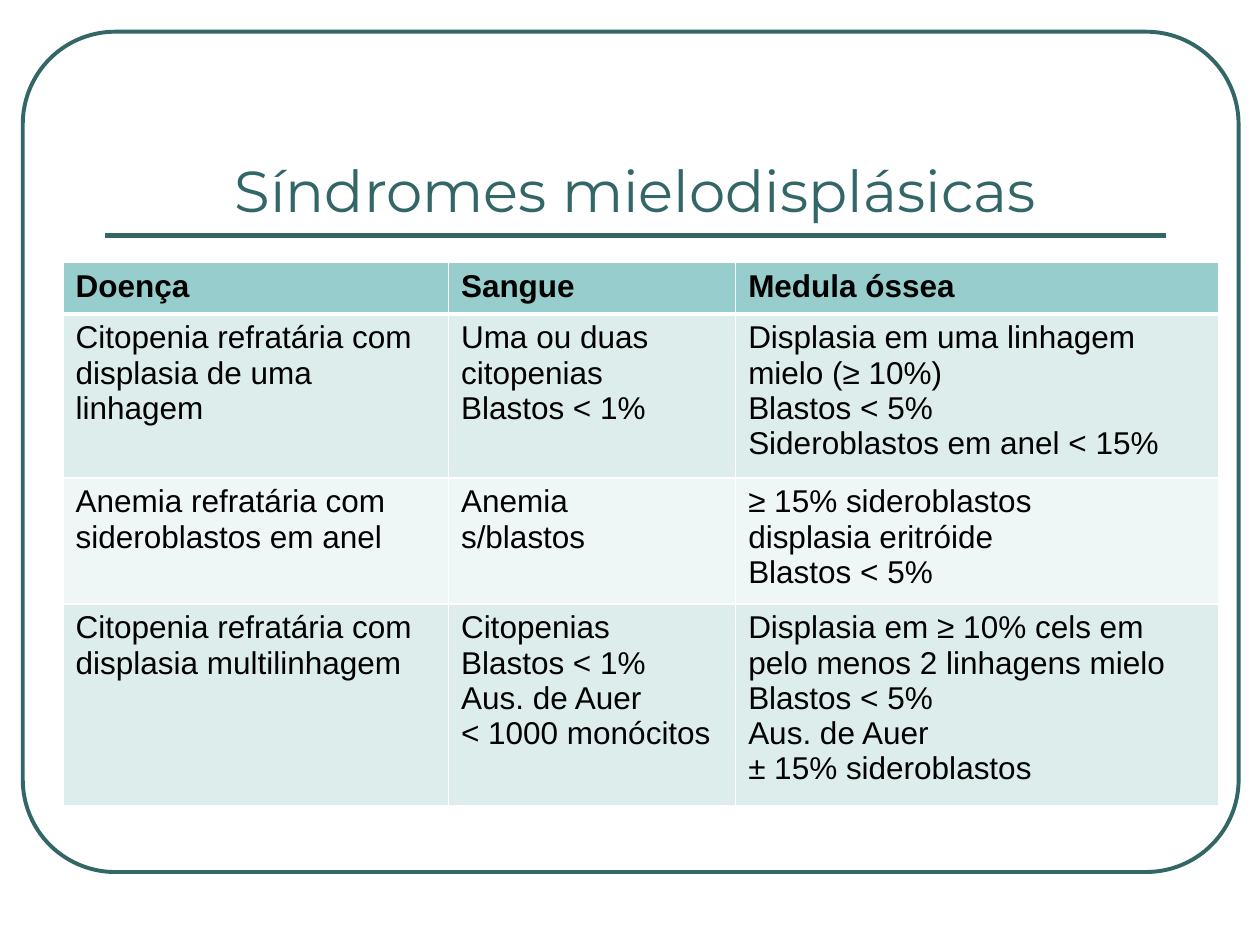
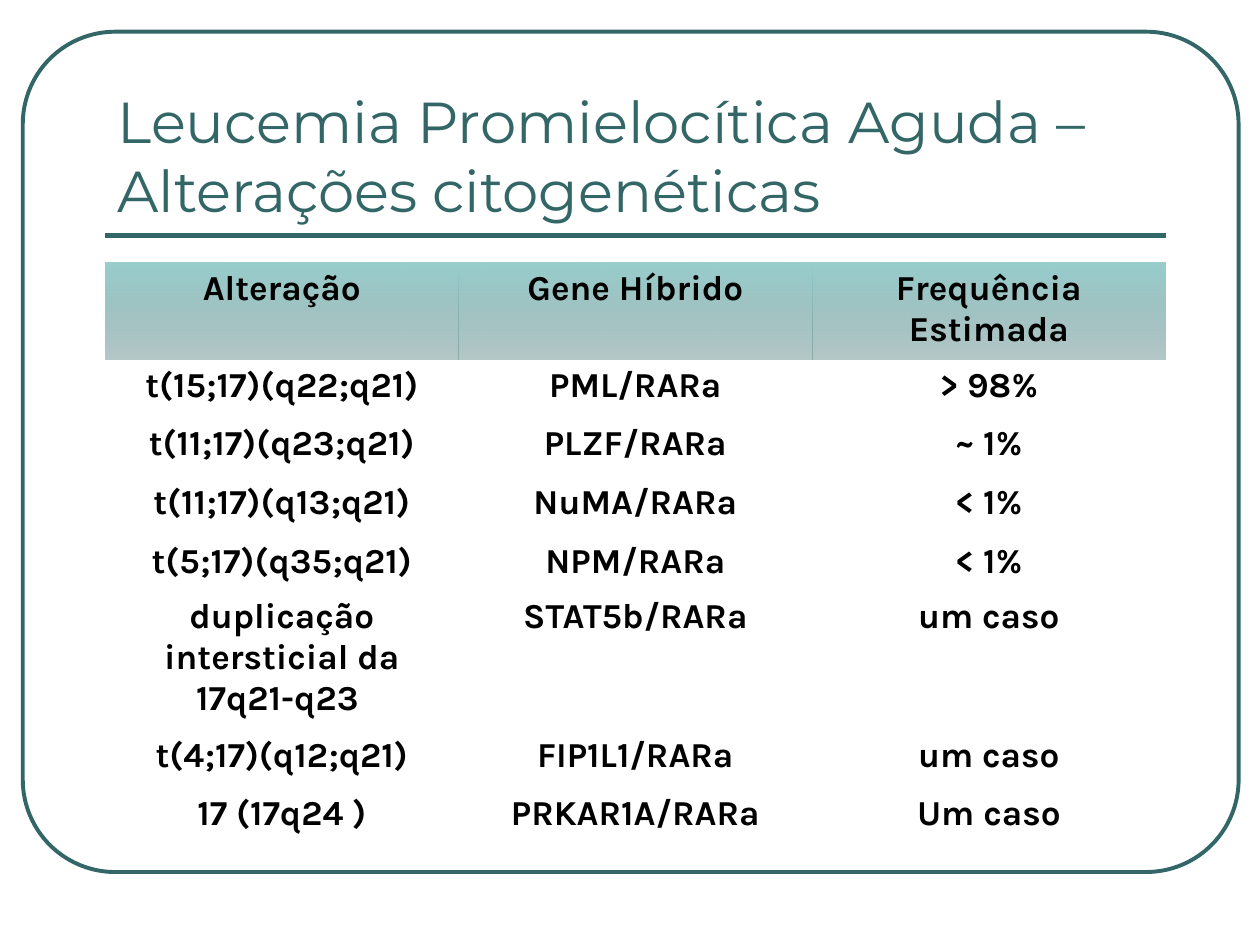
from lxml.etree import SubElement
from pptx import Presentation
from pptx.dml.color import RGBColor
from pptx.enum.shapes import MSO_CONNECTOR, MSO_SHAPE
from pptx.enum.text import MSO_ANCHOR, PP_ALIGN
from pptx.oxml.ns import qn
from pptx.util import Cm, Pt

DARK_TEAL, TEAL, BLACK, WHITE = "336666", "97CDCC", "000000", "FFFFFF"
GRADIENT_END = "6C9392"
BANDS = ["DDEDEC", "EFF6F6"]
NO_STYLE = "{2D5ABB26-0587-4C30-8999-92F81FD0307C}"
LEFT, WIDTH, RULE_TOP, TABLE_TOP = 2.12, 21.38, 4.75, 5.29

SYNDROMES = [
    ["Doença", "Sangue", "Medula óssea"],
    ["Citopenia refratária com displasia de uma linhagem",
     "Uma ou duas citopenias\nBlastos < 1%",
     "Displasia em uma linhagem mielo (≥ 10%)\nBlastos < 5%\nSideroblastos em anel < 15%"],
    ["Anemia refratária com sideroblastos em anel",
     "Anemia\ns/blastos",
     "≥ 15% sideroblastos\ndisplasia eritróide\nBlastos < 5%"],
    ["Citopenia refratária com displasia multilinhagem",
     "Citopenias\nBlastos < 1%\nAus. de Auer\n< 1000 monócitos",
     "Displasia em ≥ 10% cels em pelo menos 2 linhagens mielo\nBlastos < 5%\n"
     "Aus. de Auer\n± 15% sideroblastos"],
]
ALTERATIONS = [
    ["Alteração", "Gene Híbrido", "Frequência Estimada"],
    ["t(15;17)(q22;q21)", "PML/RARa", "> 98%"],
    ["t(11;17)(q23;q21)", "PLZF/RARa", "~ 1%"],
    ["t(11;17)(q13;q21)", "NuMA/RARa", "< 1%"],
    ["t(5;17)(q35;q21)", "NPM/RARa", "< 1%"],
    ["duplicação intersticial da 17q21-q23 ", "STAT5b/RARa", "um caso"],
    ["t(4;17)(q12;q21)", "FIP1L1/RARa", "um caso"],
    ["17 (17q24 )", "PRKAR1A/RARa", "Um caso"],
]

SLIDES = [
    dict(title="Síndromes mielodisplásicas", title_align=PP_ALIGN.CENTER,
         rows=SYNDROMES, left=1.27, widths=[7.77, 5.79, 9.73], heights=[1.04] * 4,
         font="Arial", size=18, align=PP_ALIGN.LEFT, banded=True),
    dict(title="Leucemia Promielocítica Aguda – Alterações citogenéticas",
         title_align=PP_ALIGN.LEFT,
         rows=ALTERATIONS, left=LEFT, widths=[WIDTH / 3] * 3,
         heights=[1.24, 1.17, 1.19, 1.19, 0.99, 1.91, 1.17, 1.19],
         font="Karla", size=20, align=PP_ALIGN.CENTER, banded=False),
]


def color(hex_code):
    return RGBColor.from_string(hex_code)


def style_text(p, font, size, hex_code, align, bold=False):
    p.alignment = align
    p.font.name, p.font.size, p.font.bold = font, Pt(size), bold
    p.font.color.rgb = color(hex_code)


prs = Presentation()
prs.slide_width, prs.slide_height = Cm(25.4), Cm(19.05)

for content in SLIDES:
    s = prs.slides.add_slide(prs.slide_layouts[6])

    # Frame and rule
    frame = s.shapes.add_shape(MSO_SHAPE.ROUNDED_RECTANGLE,
                               Cm(0.46), Cm(0.64), Cm(24.51), Cm(16.94))
    frame.adjustments[0] = 0.11
    frame.shadow.inherit = False
    frame.fill.background()
    frame.line.color.rgb = color(DARK_TEAL)
    frame.line.width = Pt(2.25)
    rule = s.shapes.add_connector(MSO_CONNECTOR.STRAIGHT, Cm(LEFT), Cm(RULE_TOP),
                                  Cm(LEFT + WIDTH), Cm(RULE_TOP))
    rule.line.color.rgb = color(DARK_TEAL)
    rule.line.width = Pt(3)
    SubElement(rule._element.spPr, qn("a:effectLst"))

    # Title
    tf = s.shapes.add_textbox(Cm(LEFT), Cm(1.47), Cm(WIDTH), Cm(3.18)).text_frame
    tf.word_wrap = True
    tf.vertical_anchor = MSO_ANCHOR.BOTTOM
    tf.text = content["title"]
    style_text(tf.paragraphs[0], "Montserrat", 33, DARK_TEAL, content["title_align"])

    # Table
    rows, widths, heights = content["rows"], content["widths"], content["heights"]
    graphic = s.shapes.add_table(len(rows), len(widths), Cm(content["left"]), Cm(TABLE_TOP),
                                 Cm(sum(widths)), Cm(sum(heights)))
    table = graphic.table
    graphic._element.find(".//" + qn("a:tableStyleId")).text = NO_STYLE
    for column, width in zip(table.columns, widths):
        column.width = Cm(width)
    for i, (texts, height) in enumerate(zip(rows, heights)):
        table.rows[i].height = Cm(height)
        for j, text in enumerate(texts):
            cell = table.cell(i, j)
            cell.text = text
            for p in cell.text_frame.paragraphs:
                style_text(p, content["font"], content["size"], BLACK, content["align"],
                           bold=i == 0 or not content["banded"])
            tcPr = cell._tc.get_or_add_tcPr()
            if content["banded"]:
                for side in "LRTB":
                    thick = (i, side) in [(0, "B"), (1, "T")]
                    border = SubElement(tcPr, qn(f"a:ln{side}"), w=str(Pt(3 if thick else 1)))
                    SubElement(SubElement(border, qn("a:solidFill")), qn("a:srgbClr"), val=WHITE)
                cell.fill.solid()
                cell.fill.fore_color.rgb = color(TEAL if i == 0 else BANDS[(i - 1) % 2])
            elif i == 0:
                cell.fill.gradient()
                cell.fill.gradient_angle = 270
                for stop, hex_code in zip(cell.fill.gradient_stops, [TEAL, GRADIENT_END]):
                    stop.color.rgb = color(hex_code)
                end_color = tcPr.findall(".//" + qn("a:srgbClr"))[-1]
                SubElement(end_color, qn("a:alpha"), val="50000")
            else:
                cell.fill.background()

prs.save("out.pptx")
